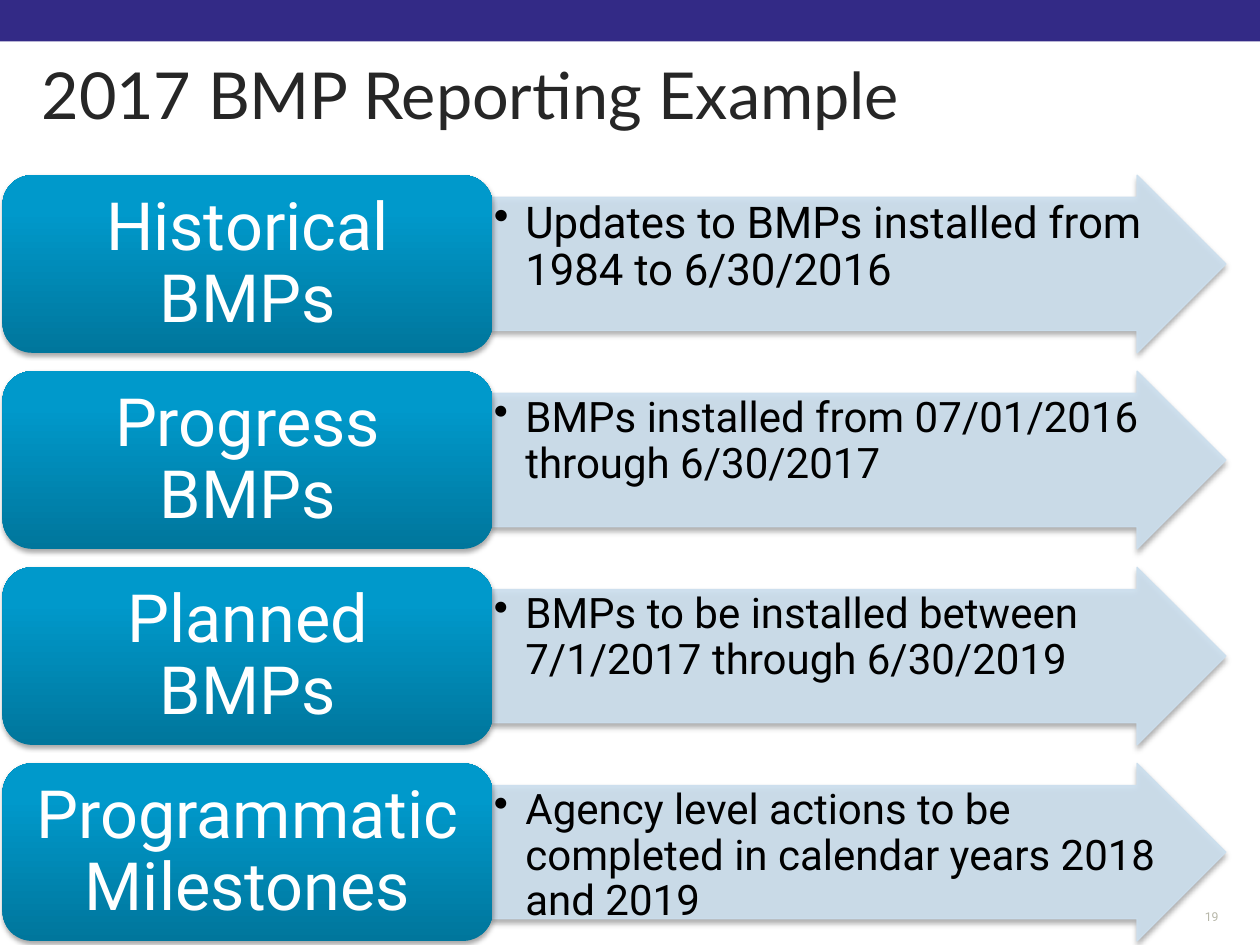
import pptx
import pptx.dml.color
import pptx.enum.shapes
import pptx.enum.text
import pptx.oxml.ns
import pptx.util
from lxml import etree

Inches = pptx.util.Inches
Pt = pptx.util.Pt
RGBColor = pptx.dml.color.RGBColor
SHAPE = pptx.enum.shapes.MSO_SHAPE
ALIGN = pptx.enum.text.PP_ALIGN
ANCHOR = pptx.enum.text.MSO_ANCHOR
qn = pptx.oxml.ns.qn

PURPLE = RGBColor(0x33, 0x2A, 0x86)
PALE_BLUE = RGBColor(0xCC, 0xDF, 0xEE)
DARK_BLUE = RGBColor(0x00, 0x76, 0x9C)
BRIGHT_BLUE = RGBColor(0x00, 0x99, 0xCB)
WHITE = RGBColor(0xFF, 0xFF, 0xFF)
BLACK = RGBColor(0x00, 0x00, 0x00)
CHARCOAL = RGBColor(0x26, 0x26, 0x26)
GREY = RGBColor(0xB7, 0xB7, 0xA9)


def add_text(place, margins, text, size, color, font="Roboto", align=ALIGN.LEFT,
             anchor=ANCHOR.TOP, spacing=1.0):
    box = page.shapes.add_textbox(*[Inches(value) for value in place])
    frame = box.text_frame
    frame.word_wrap = True
    frame.vertical_anchor = anchor
    frame.margin_left = frame.margin_right = Inches(margins[0])
    frame.margin_top = frame.margin_bottom = Inches(margins[1])
    para = frame.paragraphs[0]
    para.alignment = align
    para.line_spacing = spacing
    span = para.add_run()
    span.text = text
    span.font.name = font
    span.font.size = Pt(size)
    span.font.color.rgb = color
    return para


def add_shadowed(kind, place):
    shape = page.shapes.add_shape(kind, *[Inches(value) for value in place])
    shape.shadow.inherit = False
    effects = shape._element.spPr.find(qn("a:effectLst"))
    shadow = etree.SubElement(effects, qn("a:outerShdw"), blurRad=str(Pt(3.1)),
                              dist=str(Pt(1.8)), dir="5400000", rotWithShape="0")
    color = etree.SubElement(shadow, qn("a:srgbClr"), val=str(BLACK))
    etree.SubElement(color, qn("a:alpha"), val="35000")
    return shape


deck = pptx.Presentation()
deck.slide_width = Inches(10)
deck.slide_height = Inches(7.5)
page = deck.slides.add_slide(deck.slide_layouts[6])

band = page.shapes.add_shape(SHAPE.RECTANGLE, 0, 0, Inches(10), Inches(0.33))
band.shadow.inherit = False
band.fill.solid()
band.fill.fore_color.rgb = PURPLE
band.line.fill.background()

add_text((9.25, 7.15, 0.42, 0.25), (0, 0.03), "19", 7, GREY,
         align=ALIGN.RIGHT, anchor=ANCHOR.MIDDLE)

categories = [
    ("Historical BMPs", "Updates to BMPs installed from 1984 to 6/30/2016", 25),
    ("Progress BMPs", "BMPs installed from 07/01/2016 through 6/30/2017", 24),
    ("Planned BMPs", "BMPs to be installed between 7/1/2017 through 6/30/2019", 24),
    ("Programmatic Milestones",
     "Agency level actions to be completed in calendar years 2018 and 2019", 24),
]

for row, (category, detail, detail_size) in enumerate(categories):
    top = 1.39 + row * 1.556

    arrow = add_shadowed(SHAPE.RIGHT_ARROW, (3.9, top, 5.83, 1.41))
    arrow.adjustments[0] = 0.75
    arrow.adjustments[1] = 0.5
    arrow.fill.solid()
    arrow.fill.fore_color.rgb = PALE_BLUE
    arrow.line.color.rgb = PALE_BLUE
    arrow.line.width = Pt(0.75)
    for color in arrow._element.spPr.findall(".//" + qn("a:solidFill") + "/" + qn("a:srgbClr")):
        etree.SubElement(color, qn("a:alpha"), val="90000")

    para = add_text((3.9, top + 0.18, 5.3, 1.06), (0.02, 0.02), detail,
                    detail_size, BLACK, spacing=0.9)
    properties = para._p.get_or_add_pPr()
    properties.set("marL", str(Inches(0.25)))
    properties.set("indent", str(Inches(-0.25)))
    etree.SubElement(properties, qn("a:buChar"), char="•")

    label = add_shadowed(SHAPE.ROUNDED_RECTANGLE, (0.02, top, 3.89, 1.41))
    label.fill.gradient()
    label.fill.gradient_angle = 90
    bottom_stop, top_stop = label.fill.gradient_stops
    bottom_stop.position = 0
    bottom_stop.color.rgb = DARK_BLUE
    top_stop.position = 0.8
    top_stop.color.rgb = BRIGHT_BLUE
    label.line.fill.background()

    add_text((0.09, top + 0.07, 3.75, 1.28), (0.16, 0.08), category, 38, WHITE,
             align=ALIGN.CENTER, anchor=ANCHOR.MIDDLE, spacing=0.9)

add_text((0.33, 0.5, 9.33, 1), (0, 0.03), "2017 BMP Reporting Example", 37,
         CHARCOAL, font="Lato", spacing=0.85)

deck.save("out.pptx")
